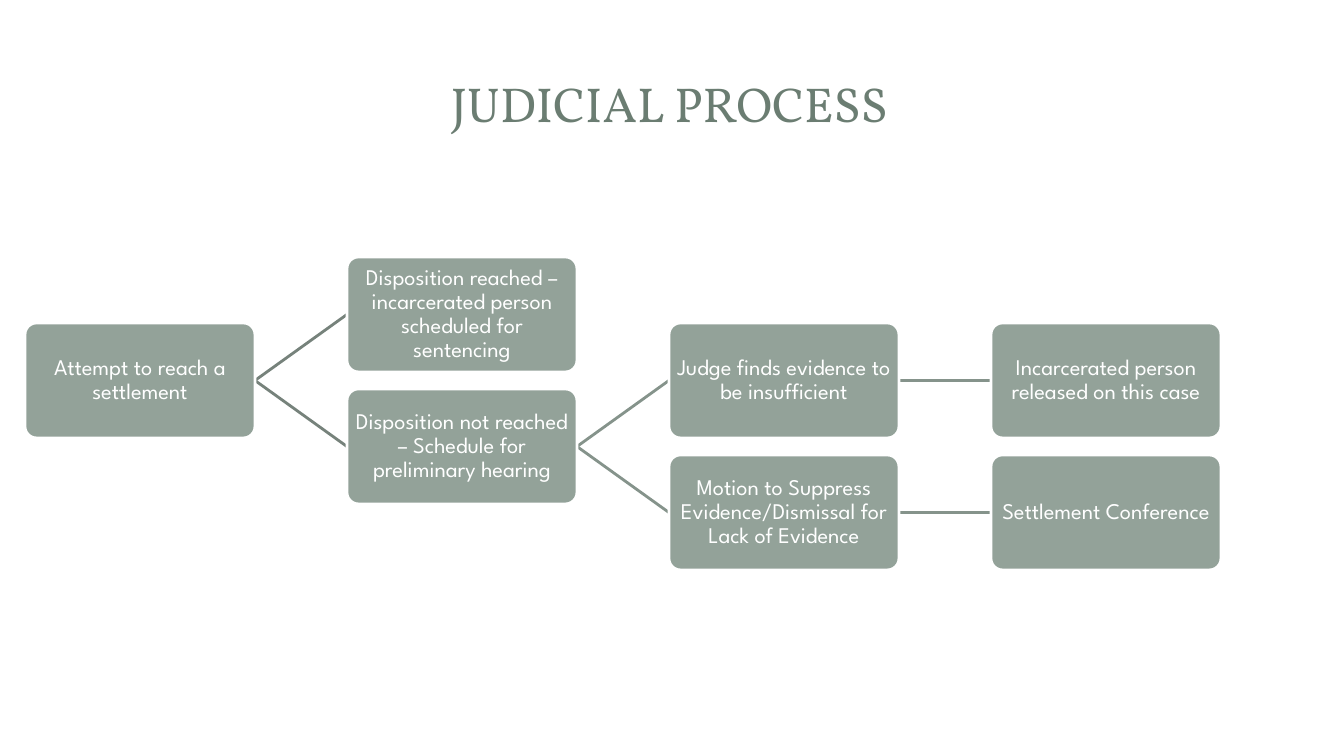
from pptx import Presentation
from pptx.dml.color import RGBColor
from pptx.enum import shapes, text
from pptx.oxml.ns import qn
from pptx.util import Emu, Pt

TITLE = "JUDICIAL PROCESS"

# name: (column, row in half steps, wording)
STEPS = {
    "settle": (0, 1, "Attempt to reach a settlement"),
    "reached": (1, 0, "Disposition reached – incarcerated person scheduled for sentencing"),
    "not reached": (1, 2, "Disposition not reached – Schedule for preliminary hearing"),
    "insufficient": (2, 1, "Judge finds evidence to be insufficient"),
    "released": (3, 1, "Incarcerated person released on this case"),
    "motion": (2, 3, "Motion to Suppress Evidence/Dismissal for Lack of Evidence"),
    "conference": (3, 3, "Settlement Conference"),
}
FIRST_LINK, LATER_LINK = "76827B", "85938B"
LINKS = [
    ("settle", "reached", FIRST_LINK),
    ("settle", "not reached", FIRST_LINK),
    ("not reached", "insufficient", LATER_LINK),
    ("not reached", "motion", LATER_LINK),
    ("insufficient", "released", LATER_LINK),
    ("motion", "conference", LATER_LINK),
]

LEFT, TOP = 25, 257
COLUMN_STEP, ROW_STEP = 322, 66
BOX_WIDTH, BOX_HEIGHT = 230, 115


def px(length):
    return Emu(round(length * 914400 / 100.8))


def color(value):
    return RGBColor.from_string(value)


def corner(name):
    column, row, _ = STEPS[name]
    return LEFT + column * COLUMN_STEP, TOP + row * ROW_STEP


def write(shape, words, *, font, size, ink, margin=0, spacing=1.0):
    """Put one centred paragraph in the middle of a shape."""
    frame = shape.text_frame
    frame.word_wrap = True
    frame.vertical_anchor = text.MSO_ANCHOR.MIDDLE
    frame.margin_left = frame.margin_right = px(margin)
    frame.margin_top = frame.margin_bottom = px(margin)
    para = frame.paragraphs[0]
    para.alignment = text.PP_ALIGN.CENTER
    para.line_spacing = spacing
    span = para.add_run()
    span.text = words
    span.font.name = font
    span.font.size = Pt(size)
    span.font.color.rgb = color(ink)


def add_link(page, start, end, ink):
    """Join the right side of one step to the left side of another."""
    start_x, start_y = corner(start)
    end_x, end_y = corner(end)
    middle = BOX_HEIGHT / 2
    link = page.shapes.add_connector(
        shapes.MSO_CONNECTOR.STRAIGHT,
        px(start_x + BOX_WIDTH), px(start_y + middle), px(end_x), px(end_y + middle))
    link.line.color.rgb = color(ink)
    link.line.width = Pt(2)
    properties = link._element.spPr
    properties.append(properties.makeelement(qn("a:effectLst"), {}))


def add_step(page, name):
    x, y = corner(name)
    box = page.shapes.add_shape(
        shapes.MSO_SHAPE.ROUNDED_RECTANGLE, px(x), px(y), px(BOX_WIDTH), px(BOX_HEIGHT))
    box.adjustments[0] = 0.1
    box.shadow.inherit = False
    box.fill.solid()
    box.fill.fore_color.rgb = color("93A299")
    box.line.color.rgb = color("FFFFFF")
    box.line.width = Pt(2)
    write(box, STEPS[name][2], font="League Spartan", size=16, ink="FFFFFF",
          margin=1, spacing=0.9)


def main():
    deck = Presentation()
    deck.slide_width, deck.slide_height = px(1344), px(756)
    page = deck.slides.add_slide(deck.slide_layouts[6])
    title = page.shapes.add_textbox(px(62), px(45), px(1215), px(115))
    write(title, TITLE, font="Vollkorn", size=35, ink="6B7D72")
    for link in LINKS:
        add_link(page, *link)
    for name in STEPS:
        add_step(page, name)
    deck.save("out.pptx")


if __name__ == "__main__":
    main()
